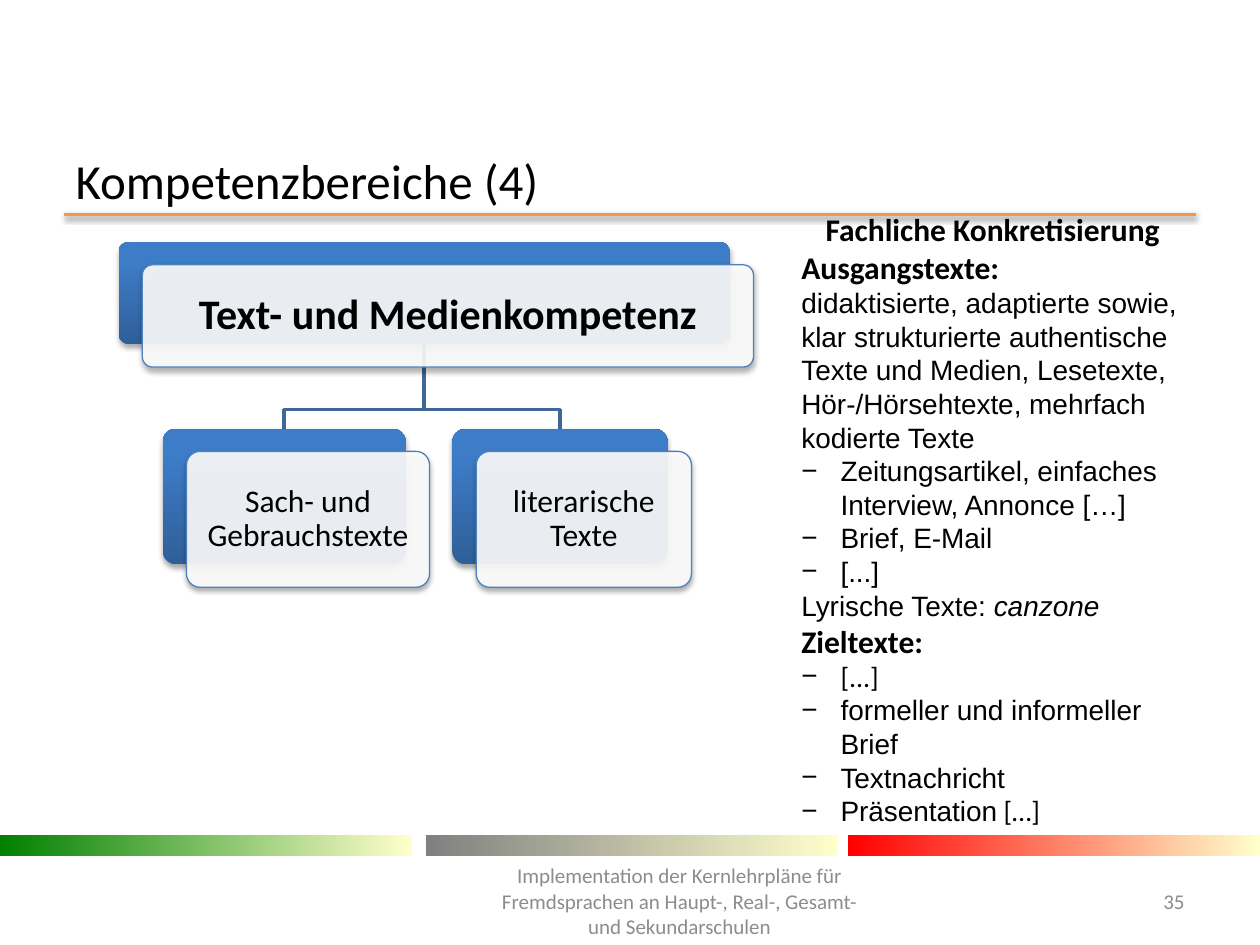
from lxml import etree
from pptx import Presentation
from pptx.dml.color import RGBColor
from pptx.enum import shapes, text
from pptx.oxml import ns
from pptx.util import Cm, Pt

HUES = {
    "ink": "000000", "muted": "8C8C8C", "rule": "F79646", "cream": "FFFFCC",
    "green": "008000", "gray": "808080", "red": "FF0000", "deep": "2F5F99",
    "blue": "3D7CC7", "edge": "4F81BD", "link": "3F6797", "white": "FFFFFF",
}
SANS, BODY = "Calibri", "Arial"
MID = text.MSO_ANCHOR.MIDDLE
ALIGN = text.PP_ALIGN


def hue(name):
    return RGBColor.from_string(HUES[name])


def node(parent, tag, **attrs):
    return etree.SubElement(parent, ns.qn(tag), **attrs)


def style(font, size, name=SANS, color="ink", bold=False):
    font.size, font.name, font.bold = Pt(size), name, bold
    font.color.rgb = hue(color)


def blend(shape, start, end, angle=0, stop=1.0):
    """Two-colour gradient without an outline."""
    shape.fill.gradient()
    shape.fill.gradient_angle = angle
    first, last = shape.fill.gradient_stops
    first.color.rgb, first.position = hue(start), 0
    last.color.rgb, last.position = hue(end), stop
    shape.line.fill.background()


def shade(shape, alpha=35, dist=1.8):
    """Soft shadow straight below; call after fill and line are set."""
    props = shape._element.spPr
    list_ = props.find(ns.qn("a:effectLst"))
    if list_ is None:
        list_ = node(props, "a:effectLst")
    drop = node(list_, "a:outerShdw", blurRad=str(Pt(3.1)), dist=str(Pt(dist)),
                dir="5400000", rotWithShape="0")
    color = node(drop, "a:srgbClr", val=HUES["ink"])
    node(color, "a:alpha", val=str(alpha * 1000))


def block(slide, kind, x, y, w, h):
    shape = slide.shapes.add_shape(kind, Cm(x), Cm(y), Cm(w), Cm(h))
    shape.shadow.inherit = False
    return shape


def place(shape, x, y, w, h):
    shape.left, shape.top, shape.width, shape.height = Cm(x), Cm(y), Cm(w), Cm(h)


def head(slide, x, y, w, h):
    """Title with the rule below it."""
    title = slide.shapes.title
    place(title, x, y, w, h)
    frame = title.text_frame
    frame.text = "Kompetenzbereiche (4)"
    frame.auto_size = text.MSO_AUTO_SIZE.NONE
    frame.vertical_anchor = MID
    para = frame.paragraphs[0]
    para.alignment = ALIGN.LEFT
    style(para.font, 28)
    base = Cm(y + h + 0.2)
    rule = slide.shapes.add_connector(
        shapes.MSO_CONNECTOR.STRAIGHT, Cm(x + 0.03), base, Cm(x + w - 0.03), base)
    rule.line.color.rgb, rule.line.width = hue("rule"), Pt(2)
    shade(rule, 38, 1.6)


def note(slide, words, align, x, y, w, h):
    box = slide.shapes.add_textbox(Cm(x), Cm(y), Cm(w), Cm(h))
    frame = box.text_frame
    frame.word_wrap, frame.vertical_anchor = True, MID
    frame.text = words
    para = frame.paragraphs[0]
    para.alignment = align
    style(para.font, 12, color="muted")


def foot(slide, x, y, w, h):
    """Colour bars, footer text and page number."""
    for left, color in ((0, "green"), (8.59, "gray"), (17.09, "red")):
        bar = block(slide, shapes.MSO_SHAPE.RECTANGLE, x + left, y, 8.31, 0.41)
        blend(bar, color, "cream")
    note(slide, "Implementation der Kernlehrpläne für Fremdsprachen an Haupt-, "
         "Real-, Gesamt- und Sekundarschulen", ALIGN.CENTER,
         x + 9.7, y + h - 1.02, 8, 1.02)
    note(slide, "35", ALIGN.RIGHT, x + w - 2.9, y + h - 1.02, 1.63, 1.02)


def card(slide, words, size, bold, pad, x, y, w, h):
    """Blue plate with a translucent label in front."""
    kind = shapes.MSO_SHAPE.ROUNDED_RECTANGLE
    back = block(slide, kind, x, y, w, h)
    blend(back, "deep", "blue", 90, 0.8)
    front = block(slide, kind, x + 0.48, y + 0.46, w, h)
    front.fill.solid()
    front.fill.fore_color.rgb = hue("white")
    color = front._element.spPr.find(ns.qn("a:solidFill"))[0]
    node(color, "a:alpha", val="90000")
    front.line.color.rgb, front.line.width = hue("edge"), Pt(0.75)
    for shape in (back, front):
        shape.adjustments[0] = 0.1
        shade(shape)
    frame = front.text_frame
    frame.word_wrap, frame.vertical_anchor = True, MID
    frame.margin_left = frame.margin_right = Cm(pad)
    frame.margin_top = frame.margin_bottom = Cm(pad)
    frame.text = words
    para = frame.paragraphs[0]
    para.alignment, para.line_spacing = ALIGN.CENTER, 0.9
    style(para.font, size, bold=bold)


def tree(slide, x, y, w, h):
    """Root card linked to two child cards."""
    root, low, tall = 2.06, 3.76, 2.74
    wide = w - 0.48
    kids = (("literarische Texte", 6.73, 4.34), ("Sach- und Gebrauchstexte", 0.89, 4.9))
    stem, bend = x + wide / 2, y + 3.38
    for _, left, span in kids:
        end = x + left + span / 2
        path = slide.shapes.build_freeform(Cm(stem), Cm(y + root))
        path.add_line_segments(
            [(Cm(stem), Cm(bend)), (Cm(end), Cm(bend)), (Cm(end), Cm(y + low))],
            close=False)
        link = path.convert_to_shape()
        link.shadow.inherit = False
        link.fill.background()
        link.line.color.rgb, link.line.width = hue("link"), Pt(2)
    card(slide, "Text- und Medienkompetenz", 24, True, 0.3, x, y, wide, root)
    for words, left, span in reversed(kids):
        card(slide, words, 18, False, 0.25, x + left, y + low, span, tall)


def row(para, kind, words, name=BODY):
    """One line of the list: heading, plain text or dash item."""
    props = para._p.get_or_add_pPr()
    dash = kind == "dash"
    props.set("marL", str(Cm(0.79 if dash else 0)))
    props.set("indent", str(Cm(-0.79 if dash else 0)))
    if dash:
        node(props, "a:buFont", typeface=BODY)
        node(props, "a:buChar", char="−")
    else:
        node(props, "a:buNone")
    para.space_before = Pt(0)
    para.alignment = ALIGN.CENTER if kind == "top" else ALIGN.LEFT
    para.add_run().text = words
    if kind in ("top", "head"):
        style(para.font, 18, bold=True)
    else:
        style(para.font, 16, name)


def panel(slide, x, y, w, h):
    """List of source and target texts."""
    body = slide.placeholders[1]
    place(body, x, y, w, h)
    frame = body.text_frame
    frame.auto_size = text.MSO_AUTO_SIZE.NONE
    rows = (
        ("top", "Fachliche Konkretisierung"),
        ("head", "Ausgangstexte:"),
        ("text", "didaktisierte, adaptierte sowie, klar strukturierte authentische "
                 "Texte und Medien, Lesetexte, Hör-/Hörsehtexte, mehrfach kodierte Texte"),
        ("dash", "Zeitungsartikel, einfaches Interview, Annonce […]"),
        ("dash", "Brief, E-Mail"),
        ("dash", "[...]"),
        ("text", "Lyrische Texte: "),
        ("head", "Zieltexte:"),
        ("dash", "[...]", SANS),
        ("dash", "formeller und informeller Brief"),
        ("dash", "Textnachricht"),
        ("dash", "Präsentation"),
    )
    for i, item in enumerate(rows):
        row(frame.paragraphs[0] if i == 0 else frame.add_paragraph(), *item)
    # Lines with a second run in another face
    song = frame.paragraphs[6].add_run()
    song.text, song.font.italic = "canzone", True
    rest = frame.paragraphs[-1].add_run()
    rest.text, rest.font.name = " […]", SANS


def main():
    deck = Presentation()
    deck.slide_width, deck.slide_height = Cm(25.4), Cm(19.05)
    slide = deck.slides.add_slide(deck.slide_layouts[1])
    head(slide, 1.27, 3.12, 22.86, 1)
    foot(slide, 0, 16.84, 25.4, 1.83)
    tree(slide, 2.39, 4.88, 12.8, 6.96)
    panel(slide, 15.9, 4.11, 8.23, 11.79)
    deck.save("out.pptx")


if __name__ == "__main__":
    main()
